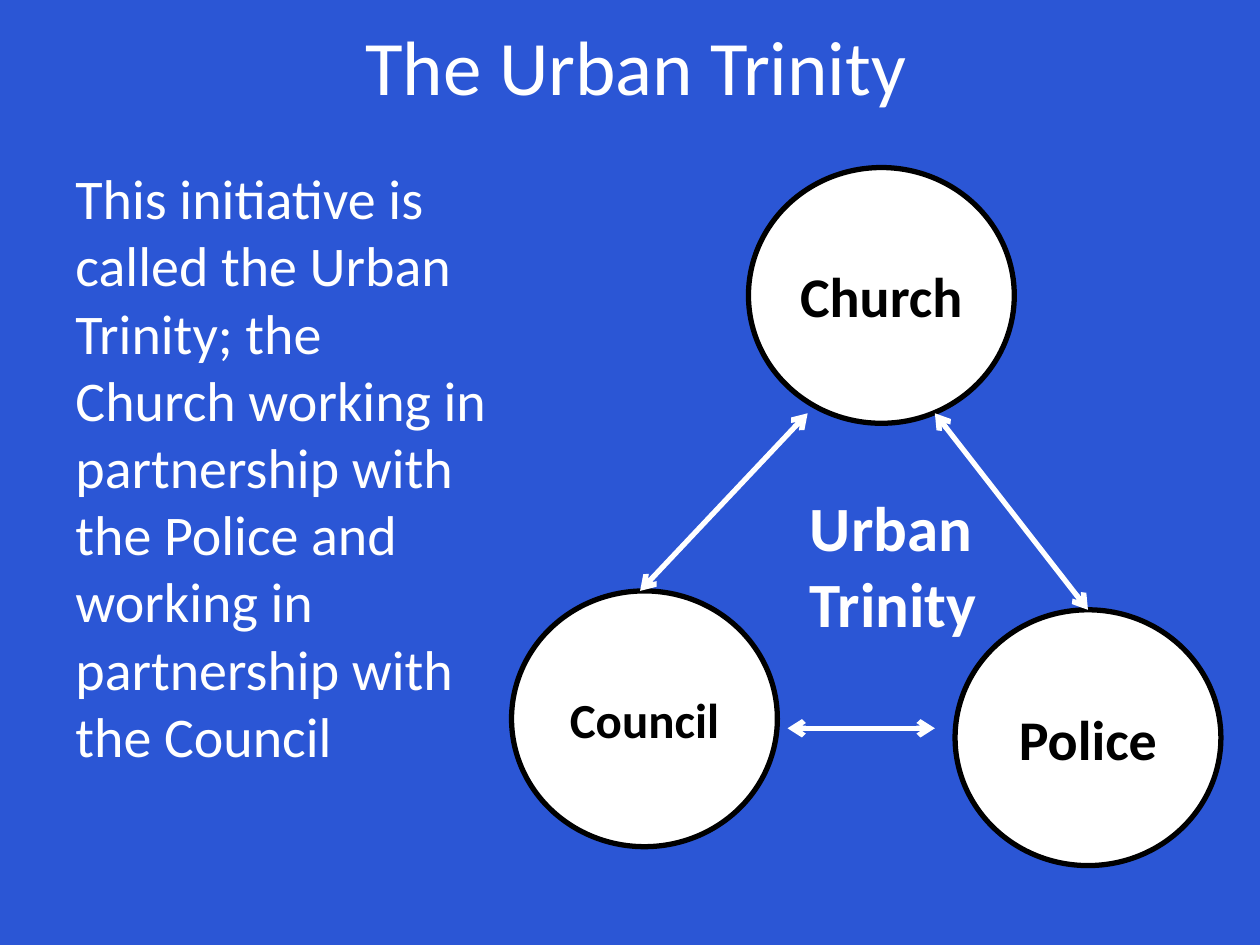
from lxml.etree import SubElement
from pptx import Presentation
from pptx.dml.color import RGBColor
from pptx.enum.shapes import MSO_CONNECTOR, MSO_SHAPE
from pptx.enum.text import MSO_ANCHOR, PP_ALIGN
from pptx.oxml.ns import qn
from pptx.util import Pt

PX = 9144
BLUE, WHITE, BLACK = "2B56D5", "FFFFFF", "000000"
CIRCLE_W, CIRCLE_H = 211, 203


def px(*values):
    """Turn px lengths into EMU."""
    return [v * PX for v in values]


def rgb(hex_color):
    """Return the colour for a hex string."""
    return RGBColor.from_string(hex_color)


def set_text(sp, text, size, color, bold=False, align=PP_ALIGN.LEFT, anchor=MSO_ANCHOR.TOP):
    """Write one formatted paragraph into a shape."""
    tf = sp.text_frame
    tf.word_wrap = True
    tf.vertical_anchor = anchor
    tf.text = text
    p = tf.paragraphs[0]
    p.alignment = align
    p.font.name = "Calibri"
    p.font.size = Pt(size)
    p.font.bold = bold
    p.font.color.rgb = rgb(color)


def add_title(s, x, y, w, h):
    """Place the slide title."""
    sp = s.shapes.title
    sp.left, sp.top, sp.width, sp.height = px(x, y, w, h)
    set_text(sp, "The Urban Trinity", 44, WHITE, align=PP_ALIGN.CENTER, anchor=MSO_ANCHOR.MIDDLE)


def add_text(s, x, y, w, h, text, size, bold=False):
    """Add a white text box."""
    sp = s.shapes.add_textbox(*px(x, y, w, h))
    set_text(sp, text, size, WHITE, bold)


def add_circle(s, x, y, text, size):
    """Add one outlined partner circle."""
    sp = s.shapes.add_shape(MSO_SHAPE.OVAL, *px(x, y, CIRCLE_W, CIRCLE_H))
    sp.shadow.inherit = False
    sp.fill.solid()
    sp.fill.fore_color.rgb = rgb(WHITE)
    sp.line.color.rgb = rgb(BLACK)
    sp.line.width = Pt(3)
    set_text(sp, text, size, BLACK, True, PP_ALIGN.CENTER, MSO_ANCHOR.MIDDLE)
    return sp


def add_arrow(s, x1, y1, x2, y2):
    """Add a white line with an arrowhead at each end."""
    c = s.shapes.add_connector(MSO_CONNECTOR.STRAIGHT, *px(x1, y1, x2, y2))
    c.line.color.rgb = rgb(WHITE)
    c.line.width = Pt(3)
    ln = c.line._get_or_add_ln()
    for end in ("a:headEnd", "a:tailEnd"):
        SubElement(ln, qn(end), type="arrow")
    SubElement(c._element.spPr, qn("a:effectLst"))
    return c


def add_trinity(s, x, y):
    """Draw the three partners, the arrows between them and the centre label."""
    add_circle(s, x + 188, y, "Church", 32)
    police = add_circle(s, x + 352, y + 351, "Police", 32)
    add_circle(s, x, y + 336, "Council", 28)
    add_arrow(s, x + 235, y + 195, x + 102, y + 336)
    add_arrow(s, x + 336, y + 445, x + 219, y + 445)
    c = add_arrow(s, x + 457, y + 351, x + 336, y + 195)
    c.begin_connect(police, 0)
    add_text(s, x + 227, y + 250, 172, 131, "Urban Trinity", 36, True)


def main():
    """Build and save the slide."""
    prs = Presentation()
    prs.slide_width, prs.slide_height = px(1000, 750)
    s = prs.slides.add_slide(prs.slide_layouts[5])
    s.background.fill.solid()
    s.background.fill.fore_color.rgb = rgb(BLUE)
    add_title(s, 55, 0, 900, 103)
    add_text(s, 50, 125, 348, 594,
             "This initiative is called the Urban Trinity; the Church working in "
             "partnership with the Police and working in partnership with the Council", 32)
    add_trinity(s, 406, 133)
    prs.save("out.pptx")


if __name__ == "__main__":
    main()
